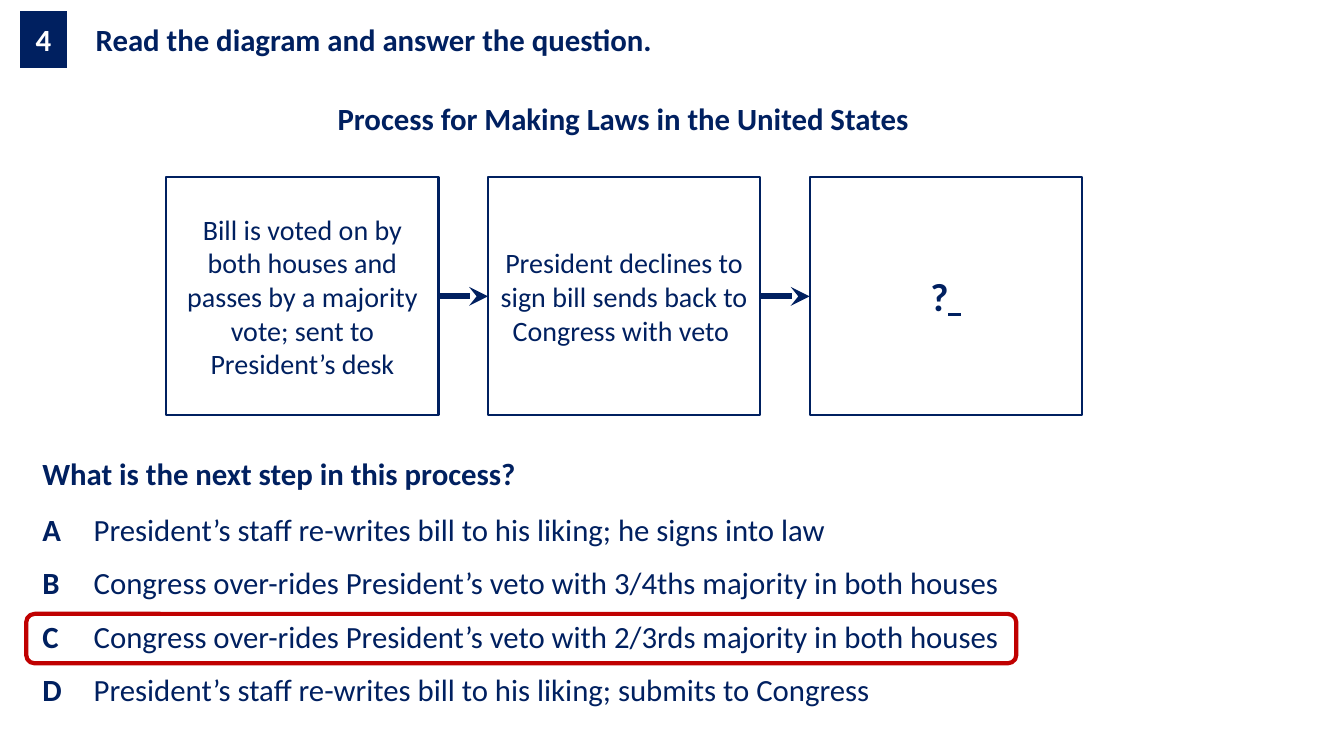
from lxml import etree
from pptx import Presentation
from pptx.dml.color import RGBColor
from pptx.enum import shapes as kinds, text as txt
from pptx.oxml import ns
from pptx.util import Inches, Pt

NAVY = RGBColor(0x00, 0x20, 0x60)
WHITE = RGBColor(0xFF, 0xFF, 0xFF)
RED = RGBColor(0xC0, 0x00, 0x00)
FONT = "Calibri"
MID = txt.PP_ALIGN.CENTER

NUMBER = "4"
TASK = "Read the diagram and answer the question."
TITLE = "Process for Making Laws in the United States"
STEPS = [
    "Bill is voted on by both houses and passes by a majority vote; sent to President’s desk",
    "President declines to sign bill sends back to Congress with veto ",
    "?",
]
QUERY = "What is the next step in this process?"
CHOICES = [
    ("A", "President’s staff re-writes bill to his liking; he signs into law"),
    ("B", "Congress over-rides President’s veto with 3/4ths majority in both houses"),
    ("C", "Congress over-rides President’s veto with 2/3rds majority in both houses"),
    ("D", "President’s staff re-writes bill to his liking; submits to Congress"),
]

HEAD_H, ROW_H = 0.58, 0.53
BOX_X, BOX_Y, BOX_W, BOX_H, PITCH = 1.65, 1.76, 2.7, 2.36, 3.19


def write(frame, words, size=22, bold=False, color=NAVY, align=None, space=None, under=None):
    """Add a run to the first paragraph of a text frame."""
    par = frame.paragraphs[0]
    if align is not None:
        par.alignment = align
    if space:
        par.line_spacing = space
    run = par.add_run()
    run.text = words
    font = run.font
    font.name, font.size, font.bold, font.underline = FONT, Pt(size), bold, under
    font.color.rgb = color


def add_grid(slide, left, top, cols, rows):
    """Add a plain table without fills or banding."""
    frame = slide.shapes.add_table(len(rows), len(cols), Inches(left), Inches(top),
                                   Inches(sum(cols)), Inches(sum(rows)))
    table = frame.table
    table.first_row = table.horz_banding = False
    for col, wide in zip(table.columns, cols):
        col.width = Inches(wide)
    for row, high in zip(table.rows, rows):
        row.height = Inches(high)
    for cell in table.iter_cells():
        cell.fill.background()
        cell.vertical_anchor = txt.MSO_ANCHOR.MIDDLE
        cell.margin_left = cell.margin_right = Inches(0.07)
        cell.margin_top = cell.margin_bottom = 0
    return table


def put(table, row, col, words, **form):
    write(table.cell(row, col).text_frame, words, space=1.07, **form)


def add_box(slide, kind, left, top, wide, high, color, weight):
    box = slide.shapes.add_shape(kind, Inches(left), Inches(top), Inches(wide), Inches(high))
    box.shadow.inherit = False
    box.fill.background()
    box.line.color.rgb = color
    box.line.width = Pt(weight)
    return box


def add_arrow(slide, start, end, y):
    arrow = slide.shapes.add_connector(kinds.MSO_CONNECTOR.STRAIGHT, Inches(start), Inches(y),
                                       Inches(end), Inches(y))
    arrow.line.color.rgb = NAVY
    arrow.line.width = Pt(4.5)
    etree.SubElement(arrow.line._get_or_add_ln(), ns.qn("a:tailEnd"), type="stealth")
    etree.SubElement(arrow._element.spPr, ns.qn("a:effectLst"))


def main():
    deck = Presentation()
    deck.slide_width, deck.slide_height = Inches(13.33), Inches(7.5)
    slide = deck.slides.add_slide(deck.slide_layouts[6])

    head = add_grid(slide, 0.19, 0.1, [0.48, 0.21, 10.41], [HEAD_H])
    badge = head.cell(0, 0)
    badge.fill.solid()
    badge.fill.fore_color.rgb = NAVY
    put(head, 0, 0, NUMBER, bold=True, color=WHITE, align=MID)
    put(head, 0, 2, TASK, bold=True)

    for i, step in enumerate(STEPS):
        left = BOX_X + i * PITCH
        box = add_box(slide, kinds.MSO_SHAPE.RECTANGLE, left, BOX_Y, BOX_W, BOX_H, NAVY, 1.5)
        box.fill.solid()
        box.fill.fore_color.rgb = WHITE
        frame = box.text_frame
        frame.word_wrap = True
        frame.vertical_anchor = txt.MSO_ANCHOR.MIDDLE
        if i < len(STEPS) - 1:
            write(frame, step, size=20, align=MID)
            add_arrow(slide, left + BOX_W, left + PITCH, BOX_Y + BOX_H / 2)
        else:
            write(frame, step, size=28, bold=True, align=MID)
            write(frame, "  ", size=20, under=True)

    title = add_grid(slide, 0.63, 0.89, [11.1], [HEAD_H])
    put(title, 0, 0, TITLE, bold=True, align=MID)

    quiz = add_grid(slide, 0.35, 4.41, [0.51, 10.59], [HEAD_H] + [ROW_H] * len(CHOICES))
    quiz.cell(0, 0).merge(quiz.cell(0, 1))
    put(quiz, 0, 0, QUERY, bold=True)
    for row, (letter, choice) in enumerate(CHOICES, 1):
        put(quiz, row, 0, letter, bold=True)
        put(quiz, row, 1, choice)

    ring = add_box(slide, kinds.MSO_SHAPE.ROUNDED_RECTANGLE, 0.26, 6.09, 9.82, 0.49, RED, 3)
    ring.adjustments[0] = 0.17

    deck.save("out.pptx")


if __name__ == "__main__":
    main()
